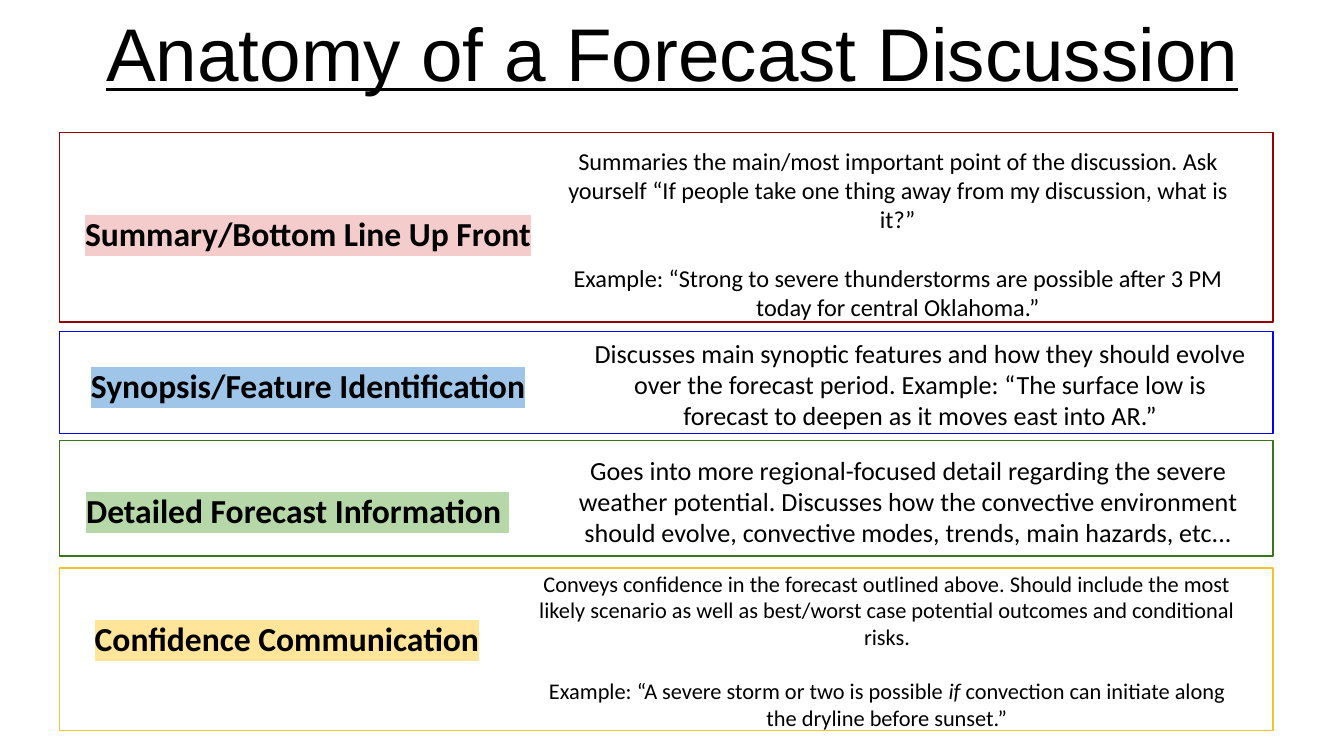
from lxml.etree import SubElement
from pptx import Presentation
from pptx.dml.color import RGBColor
from pptx.enum.shapes import MSO_SHAPE
from pptx.enum.text import MSO_ANCHOR, PP_ALIGN
from pptx.oxml.ns import qn
from pptx.util import Cm, Pt

COLORS = {
    "text": "000000",
    "red": "980000", "red_mark": "F4CCCC",
    "blue": "0000FF", "blue_mark": "9FC5E8",
    "green": "38761D", "green_mark": "B6D7A8",
    "yellow": "F1C232", "yellow_mark": "FFE599",
}

SECTIONS = [
    {
        "color": "red", "top": 2.51, "height": 3.58,
        "label": "Summary/Bottom Line Up Front", "label_at": (0.81, 3.78),
        "detail_box": (10.21, 2.51, 13.51, 3.86), "size": 13,
        "detail": [
            ["Summaries the main/most important point of the discussion. Ask yourself "
             "“If people take one thing away from my discussion, what is it?”"],
            ["Example: “Strong to severe thunderstorms are possible after 3 PM today "
             "for central Oklahoma.”"],
        ],
    },
    {
        "color": "blue", "top": 6.27, "height": 1.93,
        "label": "Synopsis/Feature Identification", "label_at": (0.81, 6.65),
        "detail_box": (10.92, 6.12, 12.95, 2.31), "size": 14,
        "detail": [
            ["Discusses main synoptic features and how they should evolve over the "
             "forecast period. Example: “The surface low is forecast to deepen as it "
             "moves east into AR.”"],
        ],
    },
    {
        "color": "green", "top": 8.33, "height": 2.18,
        "label": "Detailed Forecast Information ", "label_at": (0.61, 9.02),
        "detail_box": (10.64, 8.33, 13.06, 2.31), "size": 14,
        "detail": [
            ["Goes into more regional-focused detail regarding the severe weather "
             "potential. Discusses how the convective environment should evolve, "
             "convective modes, trends, main hazards, etc..."],
        ],
    },
    {
        "color": "yellow", "top": 10.74, "height": 3.07,
        "label": "Confidence Communication", "label_at": (0.41, 11.43),
        "detail_box": (9.83, 10.52, 13.87, 3.58), "size": 12,
        "detail": [
            ["Conveys confidence in the forecast outlined above. Should include the "
             "most likely scenario as well as best/worst case potential outcomes and "
             "conditional risks."],
            ["Example: “A severe storm or two is possible ", ("if", {"italic": True}),
             " convection can initiate along the dryline before sunset.”"],
        ],
    },
]


class Deck:
    """Holds the style and the current slide, and draws each kind of element."""

    font = "Calibri"
    inset = 0.25
    line_height = 1.22

    def __init__(self, width, height):
        self.prs = Presentation()
        self.prs.slide_width, self.prs.slide_height = Cm(width), Cm(height)
        self.s = self.prs.slides.add_slide(self.prs.slide_layouts[6])

    def color(self, name):
        return RGBColor.from_string(COLORS[name])

    def frame(self, top, height, color):
        sp = self.s.shapes.add_shape(
            MSO_SHAPE.RECTANGLE, Cm(1.12), Cm(top), Cm(22.94), Cm(height))
        sp.shadow.inherit = False
        sp.fill.background()
        sp.line.color.rgb = self.color(color)
        sp.line.width = Pt(0.75)

    def run(self, p, text, size, font=None, mark=None, **style):
        r = p.add_run()
        r.text = text
        r.font.size = Pt(size)
        r.font.name = font or self.font
        r.font.color.rgb = self.color("text")
        for name, value in style.items():
            setattr(r.font, name, value)
        if mark:
            rPr = r.font._element
            highlight = SubElement(rPr, qn("a:highlight"))
            SubElement(highlight, qn("a:srgbClr"), val=COLORS[mark])
            rPr.find(qn("a:solidFill")).addnext(highlight)

    def text(self, box, paragraphs, size, anchor=MSO_ANCHOR.TOP, **style):
        tf = self.s.shapes.add_textbox(*map(Cm, box)).text_frame
        tf.word_wrap = True
        tf.vertical_anchor = anchor
        tf.margin_left = tf.margin_right = Cm(self.inset)
        tf.margin_top = tf.margin_bottom = Cm(self.inset)
        for i, parts in enumerate(paragraphs):
            p = tf.add_paragraph() if i else tf.paragraphs[0]
            p.alignment = PP_ALIGN.CENTER
            if i:
                p.space_before = Pt(round(size * self.line_height, 1))
            for part in parts:
                text, extra = (part, {}) if isinstance(part, str) else part
                self.run(p, text, size, **style, **extra)

    def title(self, text):
        self.text((0, -0.56, 25.4, 3.07), [[text]], 40, MSO_ANCHOR.MIDDLE,
                  font="Arial", underline=True)

    def section(self, section):
        color = section["color"]
        self.frame(section["top"], section["height"], color)
        self.text((*section["label_at"], 10.03, 1.27), [[section["label"]]], 18,
                  mark=f"{color}_mark", bold=True)
        self.text(section["detail_box"], section["detail"], section["size"])


def main():
    deck = Deck(25.4, 14.29)
    deck.title("Anatomy of a Forecast Discussion")
    for section in SECTIONS:
        deck.section(section)
    deck.prs.save("out.pptx")


if __name__ == "__main__":
    main()
